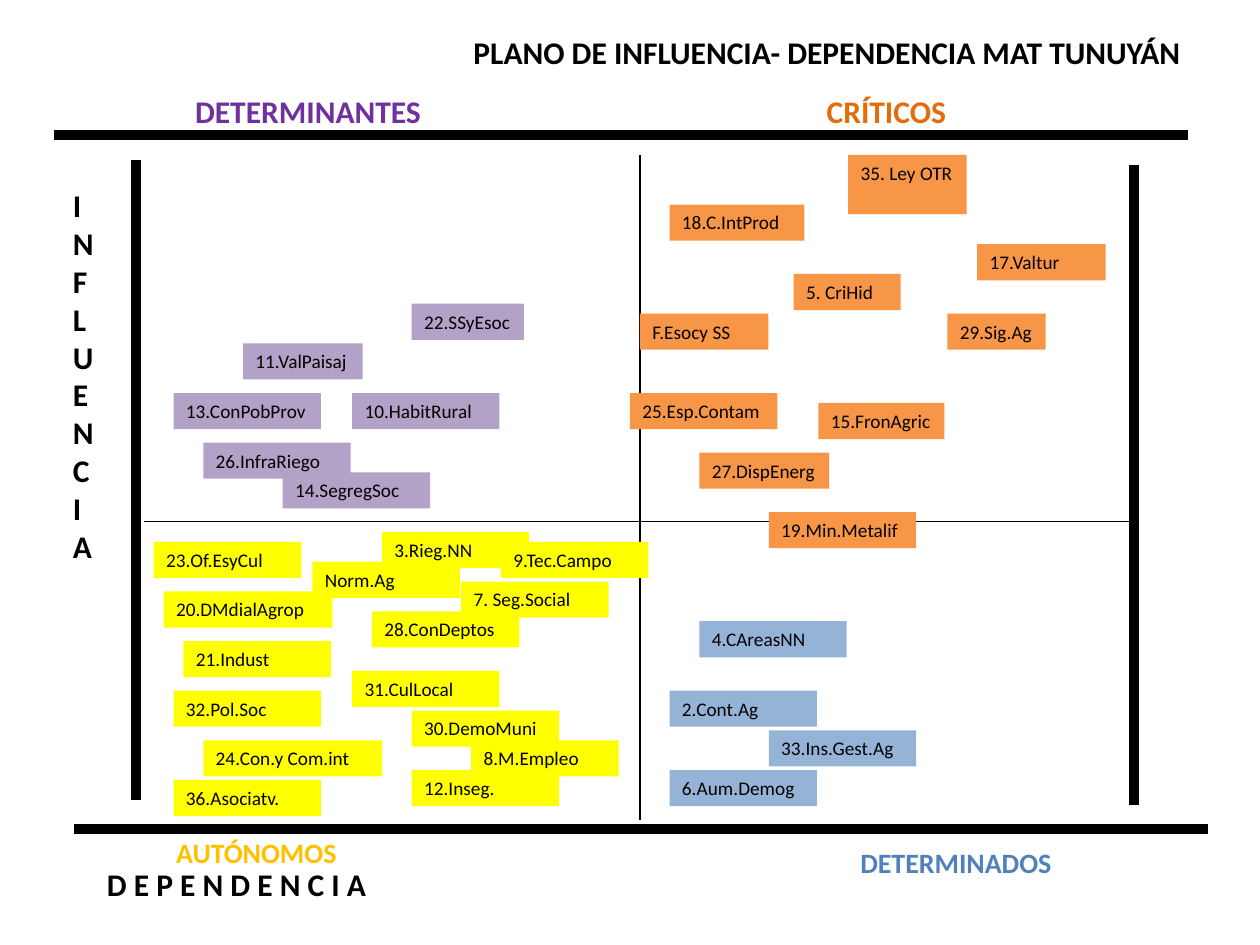
from lxml.etree import SubElement
from pptx import Presentation
from pptx.dml.color import RGBColor
from pptx.enum.shapes import MSO_CONNECTOR as CONN, MSO_SHAPE as SHAPE
from pptx.enum.text import MSO_ANCHOR as ANCHOR, PP_ALIGN as ALIGN
from pptx.oxml.ns import qn
from pptx.util import Inches, Mm, Pt

WIDTH, HEIGHT = Inches(10), Inches(7.5)
GRID_LEFT, GRID_TOP, STEP = Inches(1.22), Inches(1.23), Mm(2)
TAG_WIDTH, TAG_HEIGHT = 11.7, 3.82

BLACK = RGBColor(0x00, 0x00, 0x00)
PURPLE = RGBColor(0x70, 0x30, 0xA0)
DARK_ORANGE = RGBColor(0xE4, 0x6C, 0x0A)
GOLD = RGBColor(0xFF, 0xC0, 0x00)
BLUE = RGBColor(0x4F, 0x81, 0xBD)
LILAC = RGBColor(0xB3, 0xA2, 0xC7)
ORANGE = RGBColor(0xF7, 0x96, 0x46)
YELLOW = RGBColor(0xFF, 0xFF, 0x00)
LIGHT_BLUE = RGBColor(0x95, 0xB3, 0xD7)

# Lines: x1, y1, x2, y2 in percent of the slide, then weight in points.
LINES = [
    (10.8, 16.93, 10.8, 84.67, 6),
    (5.9, 87.73, 95.9, 87.73, 6),
    (11.4, 55.2, 89.6, 55.2, 1),
    (50.8, 16.4, 50.8, 86.8, 1),
    (4.3, 14.27, 94.3, 14.27, 6),
    (90, 17.47, 90, 85.2, 6),
]

# Labels: text, box in percent of the slide, format.
LABELS = [
    ("PLANO DE INFLUENCIA- DEPENDENCIA MAT TUNUYÁN", (36.6, 2.8, 58.7, 5.33), {}),
    ("D E P E N D E N C I A", (7.5, 90.93, 35.5, 6.67), {}),
    ("\n".join("INFLUENCIA"), (4.8, 19.07, 4.4, 55.2), {}),
    ("DETERMINANTES", (9.1, 9.07, 30.7, 5.33), dict(color=PURPLE, align=ALIGN.CENTER)),
    ("CRÍTICOS", (60.2, 9.07, 20.3, 5.33), dict(color=DARK_ORANGE, align=ALIGN.CENTER)),
    ("AUTÓNOMOS", (13, 87.73, 26, 4.93), dict(color=GOLD, size=16)),
    ("DETERMINADOS", (67.3, 88.8, 21.3, 4.93), dict(color=BLUE, size=16)),
]

# Tags: text, grid column, grid row, then width and height in percent if special.
TAGS = {
    ORANGE: [
        ("29.Sig.Ag", 80, 16, 7.8), ("5. CriHid", 64.5, 12, 8.5),
        ("18.C.IntProd", 52, 5, 10.7), ("35. Ley OTR", 70, 0, 9.4, 6.27),
        ("15.FronAgric", 67, 25, 10), ("27.DispEnerg", 55, 30, 10.3),
        ("25.Esp.Contam", 48, 24), ("19.Min.Metalif", 62, 36),
        ("17.Valtur", 83, 9, 10.2), ("F.Esocy SS", 49, 16, 10.2),
    ],
    LILAC: [
        ("22.SSyEsoc", 26, 15, 8.9), ("13.ConPobProv", 2, 24),
        ("11.ValPaisaj", 9, 19, 9.5), ("26.InfraRiego", 5, 29),
        ("10.HabitRural", 20, 24), ("14.SegregSoc", 13, 32),
    ],
    LIGHT_BLUE: [
        ("6.Aum.Demog", 52, 62), ("2.Cont.Ag", 52, 54),
        ("33.Ins.Gest.Ag", 62, 58), ("4.CAreasNN", 55, 47),
    ],
    YELLOW: [
        ("23.Of.EsyCul", 0, 39), ("20.DMdialAgrop", 1, 44, 13.4),
        ("21.Indust", 3, 49), ("32.Pol.Soc", 2, 54), ("Norm.Ag", 16, 41),
        ("28.ConDeptos", 22, 46), ("31.CulLocal", 20, 52),
        ("24.Con.y Com.int", 5, 59, 14.2), ("30.DemoMuni", 26, 56),
        ("12.Inseg.", 26, 62), ("7. Seg.Social", 31, 43),
        ("36.Asociatv.", 2, 63), ("3.Rieg.NN", 23, 38),
        ("8.M.Empleo", 32, 59), ("9.Tec.Campo", 35, 39),
    ],
}


def across(percent):
    """Turn a share of the slide's width into a length."""
    return round(WIDTH * percent / 100)


def down(percent):
    """Turn a share of the slide's height into a length."""
    return round(HEIGHT * percent / 100)


def write(sp, text, size=18, color=BLACK, bold=True, align=ALIGN.LEFT):
    """Fill a shape with text, one paragraph per line."""
    tf = sp.text_frame
    tf.word_wrap = True
    tf.vertical_anchor = ANCHOR.TOP
    if align == ALIGN.LEFT:
        tf.margin_right = 0
    tf.text = text
    for p in tf.paragraphs:
        p.alignment = align
        for r in p.runs:
            r.font.name = "Calibri"
            r.font.size = Pt(size)
            r.font.bold = bold
            r.font.color.rgb = color


def add_line(s, x1, y1, x2, y2, weight):
    """Draw a straight black line."""
    line = s.shapes.add_connector(CONN.STRAIGHT, across(x1), down(y1), across(x2), down(y2))
    line.line.color.rgb = BLACK
    line.line.width = Pt(weight)
    SubElement(line._element.spPr, qn("a:effectLst"))


def add_label(s, text, box, **style):
    """Place a bold heading or axis name."""
    x, y, w, h = box
    sp = s.shapes.add_textbox(across(x), down(y), across(w), down(h))
    write(sp, text, **style)


def add_tag(s, fill, text, col, row, width=TAG_WIDTH, height=TAG_HEIGHT):
    """Place a variable's coloured tag on the grid."""
    left, top = round(GRID_LEFT + col * STEP), GRID_TOP + row * STEP
    sp = s.shapes.add_shape(SHAPE.RECTANGLE, left, top, across(width), down(height))
    sp.shadow.inherit = False
    sp.fill.solid()
    sp.fill.fore_color.rgb = fill
    sp.line.fill.background()
    write(sp, text, size=11, bold=False)


def main():
    """Build the influence and dependence plane."""
    prs = Presentation()
    prs.slide_width, prs.slide_height = WIDTH, HEIGHT
    s = prs.slides.add_slide(prs.slide_layouts[6])
    for line in LINES:
        add_line(s, *line)
    for text, box, style in LABELS:
        add_label(s, text, box, **style)
    for fill, tags in TAGS.items():
        for tag in tags:
            add_tag(s, fill, *tag)
    prs.save("out.pptx")


if __name__ == "__main__":
    main()
